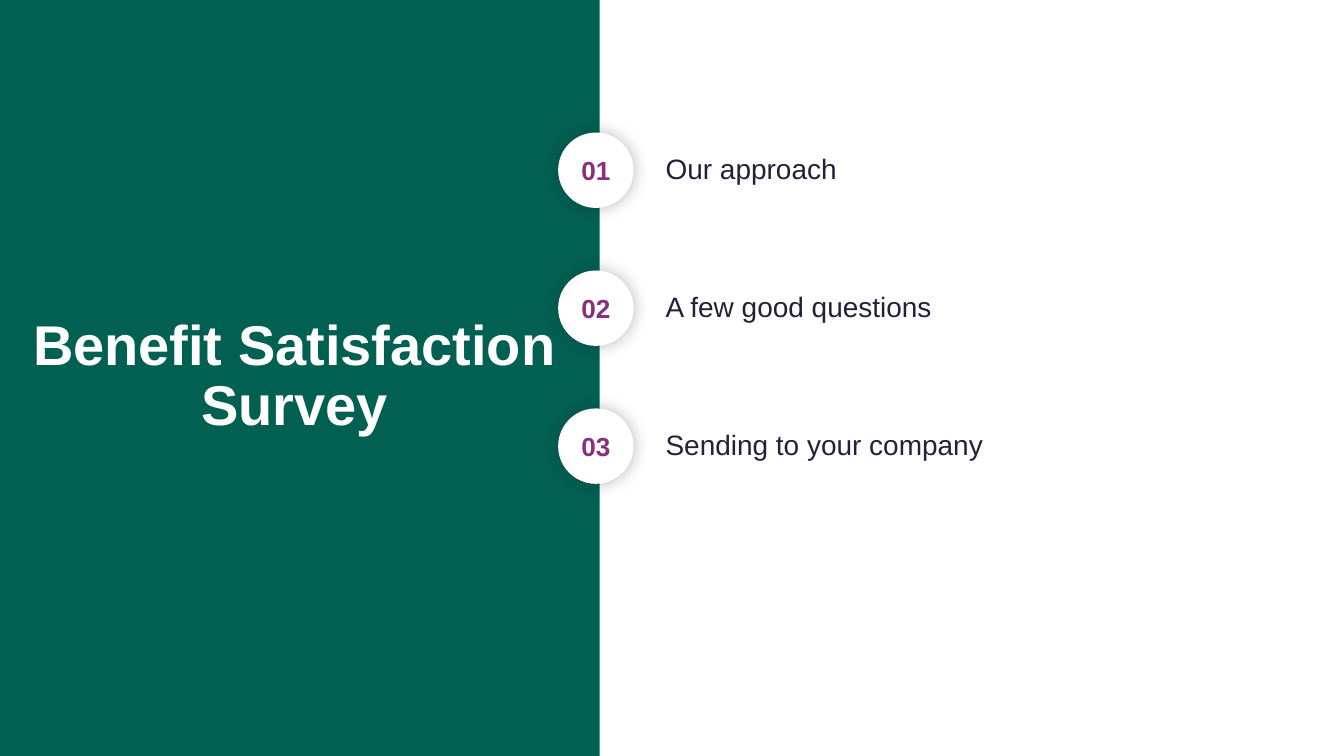
from lxml import etree
from pptx import Presentation
from pptx.dml.color import RGBColor
from pptx.enum.shapes import MSO_SHAPE
from pptx.enum.text import MSO_ANCHOR, PP_ALIGN
from pptx.oxml.ns import qn
from pptx.util import Pt

RECT = MSO_SHAPE.RECTANGLE
OVAL = MSO_SHAPE.OVAL
MIDDLE = MSO_ANCHOR.MIDDLE
LEFT = PP_ALIGN.LEFT
CENTER = PP_ALIGN.CENTER

GREEN = "026052"
WHITE = "FFFFFF"
NAVY = "21213A"
PLUM = "882F7D"

FRAME = {
    "word_wrap": True,
    "vertical_anchor": MIDDLE,
    "margin_left": Pt(5),
    "margin_right": Pt(5),
    "margin_top": Pt(3),
    "margin_bottom": Pt(3),
}


def paint(form, tone):
    form.rgb = RGBColor.from_string(tone)


def write(shape, text, tone, size, bold, align, line):
    frame = shape.text_frame
    for name, value in FRAME.items():
        setattr(frame, name, value)
    para = frame.paragraphs[0]
    para.alignment = align
    para.line_spacing = line
    run = para.add_run()
    run.text = text
    font = {"name": "Arial", "size": Pt(size), "bold": bold}
    for name, value in font.items():
        setattr(run.font, name, value)
    paint(run.font.color, tone)


deck = Presentation()
deck.slide_width = Pt(720)
deck.slide_height = Pt(405)
slide = deck.slides.add_slide(deck.slide_layouts[6])
shapes = slide.shapes
slide.background.fill.solid()
paint(slide.background.fill.fore_color, WHITE)

panel = shapes.add_shape(RECT, 0, 0, Pt(321.3), Pt(405))
panel.shadow.inherit = False
panel.fill.solid()
paint(panel.fill.fore_color, GREEN)
panel.line.fill.background()

title = shapes.add_textbox(0, Pt(119.5), Pt(315.4), Pt(165.6))
write(title, "Benefit Satisfaction Survey", WHITE, 30, True, CENTER, 0.9)

topics = ["Our approach", "A few good questions", "Sending to your company"]
for row, topic in enumerate(topics):
    top = 71 + row * 73.9

    label = shapes.add_textbox(Pt(351.6), Pt(top + 1), Pt(268.6), Pt(38.4))
    write(label, topic, NAVY, 15, False, LEFT, 0.95)

    badge = shapes.add_shape(OVAL, Pt(299), Pt(top), Pt(40.4), Pt(40.4))
    badge.fill.solid()
    paint(badge.fill.fore_color, WHITE)
    badge.line.fill.background()
    badge.shadow.inherit = False
    glow = badge._element.spPr.find(qn("a:effectLst"))
    shade = etree.SubElement(glow, qn("a:outerShdw"), blurRad=str(Pt(9)),
                             dist="0", dir="0", algn="ctr", rotWithShape="0")
    tint = etree.SubElement(shade, qn("a:srgbClr"), val=NAVY)
    etree.SubElement(tint, qn("a:alpha"), val="31000")
    write(badge, f"{row + 1:02}", PLUM, 14, True, CENTER, 1.0)

deck.save("out.pptx")
